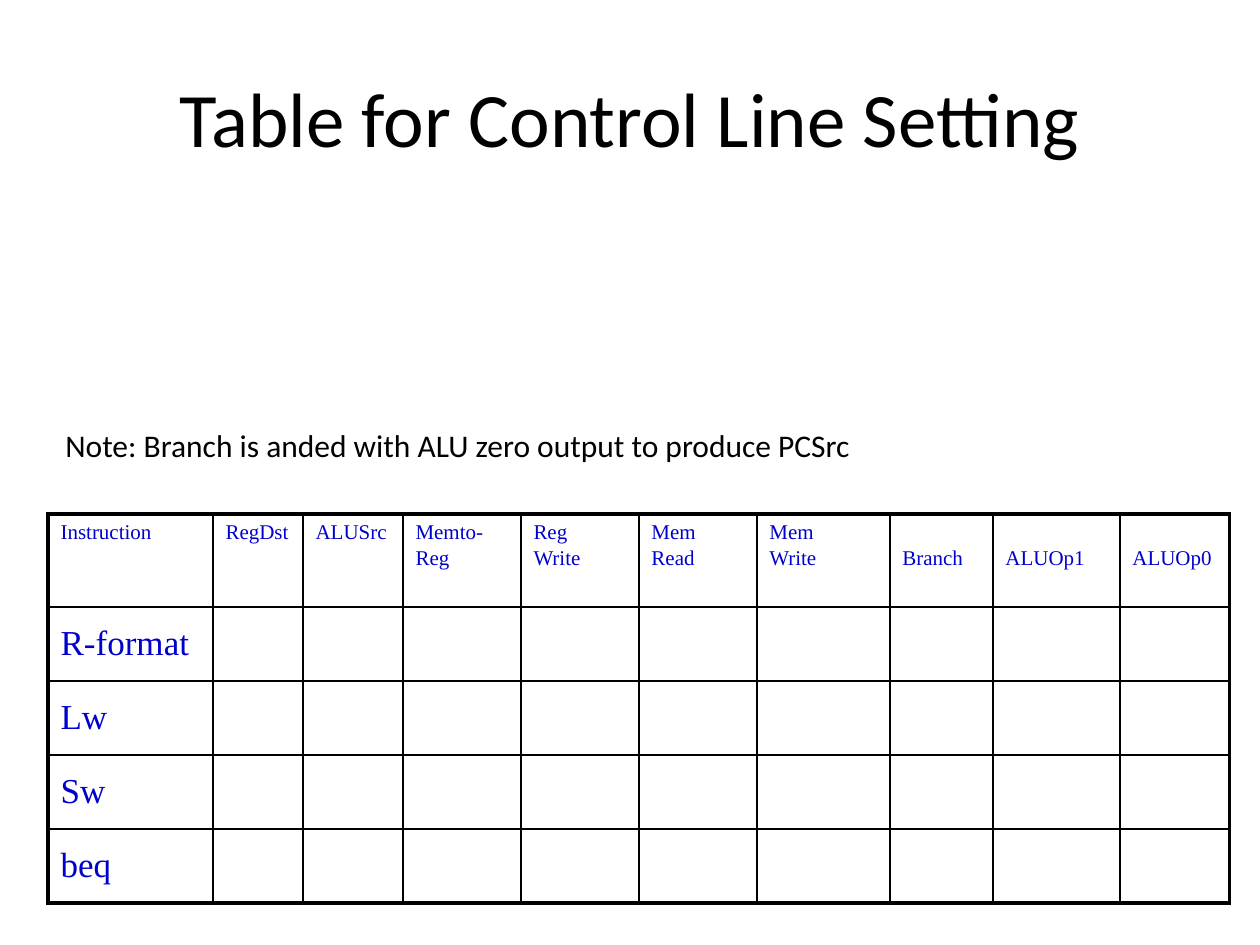
from lxml.etree import SubElement
from pptx import Presentation
from pptx.dml.color import RGBColor as RGB
from pptx.enum.text import MSO_ANCHOR as ANCHOR, MSO_AUTO_SIZE as AUTO, PP_ALIGN as ALIGN
from pptx.oxml.ns import qn
from pptx.util import Emu, Pt

# Content
TITLE = "Table for Control Line Setting"
NOTE = "Note: Branch is anded with ALU zero output to produce PCSrc"
SIGNALS = ["Instruction", "RegDst", "ALUSrc", "Memto-\nReg", "Reg\nWrite",
           "Mem\nRead", "Mem\nWrite", "Branch", "ALUOp1", "ALUOp0"]
INSTRUCTIONS = ["R-format", "Lw", "Sw", "beq"]
LOWERED = {"Branch", "ALUOp1", "ALUOp0"}  # headings on the second line

# Theme
THEME = {
    "title": {"name": "Calibri", "size": Pt(44), "color": "000000"},
    "note": {"name": "Calibri", "size": Pt(18), "color": "000000"},
    "head": {"name": "Times New Roman", "size": Pt(12), "color": "0000CC"},
    "label": {"name": "Times New Roman", "size": Pt(20), "color": "0000CC"},
    "border": "000000", "outer": Pt(2.25), "inner": Pt(1),
}

# Layout in px, 126 to the inch
TITLE_BOX = (63, 38, 1134, 158)
NOTE_BOX = (53, 420, 902, 50)
TABLE_AT = (48, 514)
COL_W = [165, 90, 100, 118, 118, 118, 133, 103, 127, 110]
ROW_H = [93] + [74] * len(INSTRUCTIONS)
LOWERED_TOP = 33


def px(n):
    return Emu(round(n * 914400 / 126))


def write(tf, text, style, **para):
    tf.text = text
    for p in tf.paragraphs:
        for key, value in para.items():
            setattr(p, key, value)
        for r in p.runs:
            r.font.name, r.font.size = style["name"], style["size"]
            r.font.color.rgb = RGB.from_string(style["color"])


def set_borders(cell, outer_sides):
    tc_pr = cell._tc.get_or_add_tcPr()
    for i, side in enumerate("LRTB"):
        width = THEME["outer" if side in outer_sides else "inner"]
        ln = SubElement(tc_pr, qn(f"a:ln{side}"), w=str(int(width)))
        fill = SubElement(ln, qn("a:solidFill"))
        SubElement(fill, qn("a:srgbClr"), val=THEME["border"])
        tc_pr.insert(i, ln)


prs = Presentation()
prs.slide_width, prs.slide_height = px(1260), px(945)
s = prs.slides.add_slide(prs.slide_layouts[5])

# Title
title = s.shapes.title
title.left, title.top, title.width, title.height = map(px, TITLE_BOX)
title.text_frame.vertical_anchor = ANCHOR.MIDDLE
write(title.text_frame, TITLE, THEME["title"], alignment=ALIGN.CENTER)

# Control line table
rows, cols = len(ROW_H), len(COL_W)
table = s.shapes.add_table(rows, cols, *map(px, (*TABLE_AT, sum(COL_W), sum(ROW_H)))).table
table.first_row = table.horz_banding = False
for col, w in zip(table.columns, COL_W):
    col.width = px(w)
for row, h in zip(table.rows, ROW_H):
    row.height = px(h)

for r in range(rows):
    for c in range(cols):
        cell = table.cell(r, c)
        cell.fill.background()
        edges = {"L": c == 0, "R": c == cols - 1, "T": r == 0, "B": r == rows - 1}
        set_borders(cell, {side for side, outer in edges.items() if outer})

for c, signal in enumerate(SIGNALS):
    cell = table.cell(0, c)
    write(cell.text_frame, signal, THEME["head"], space_before=Pt(1.6))
    if signal in LOWERED:
        cell.margin_top = px(LOWERED_TOP)
for r, instruction in enumerate(INSTRUCTIONS, 1):
    cell = table.cell(r, 0)
    cell.vertical_anchor = ANCHOR.MIDDLE
    write(cell.text_frame, instruction, THEME["label"])

# Note
tf = s.shapes.add_textbox(*map(px, NOTE_BOX)).text_frame
tf.word_wrap, tf.auto_size = False, AUTO.SHAPE_TO_FIT_TEXT
write(tf, NOTE, THEME["note"])

prs.save("out.pptx")
